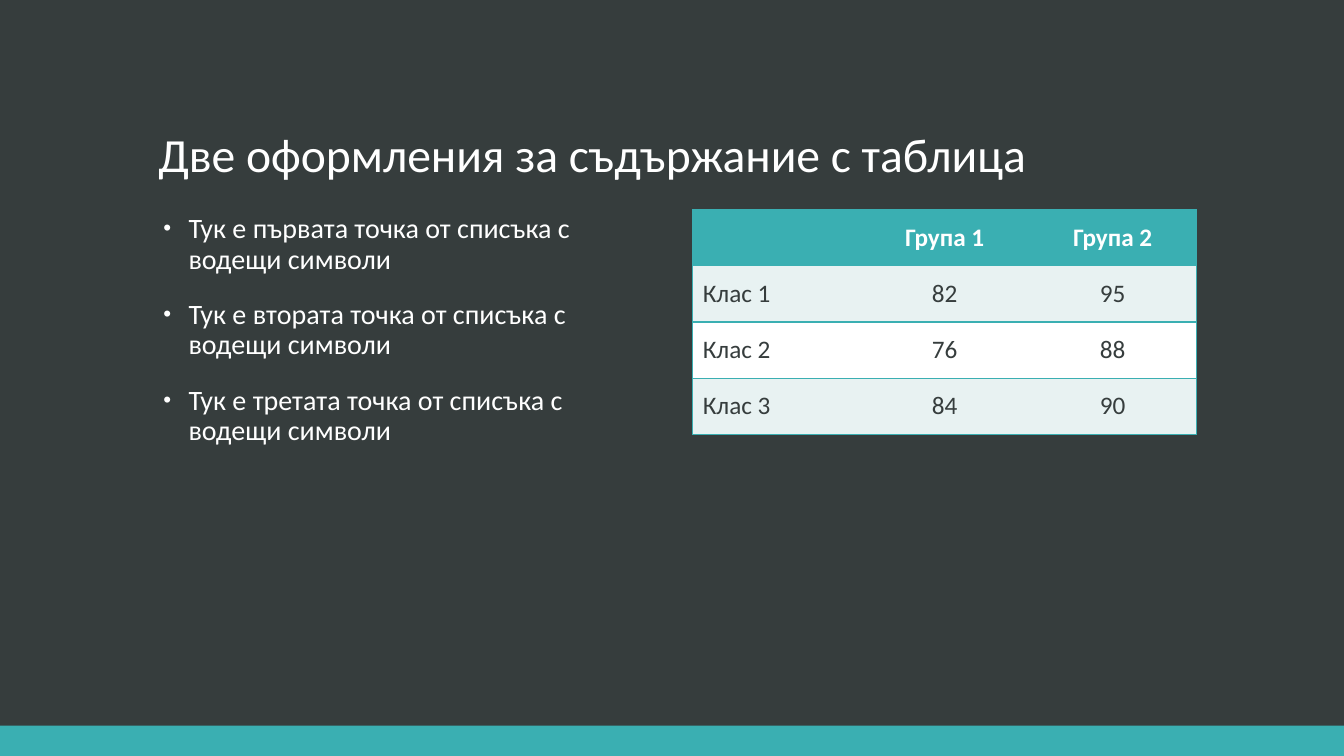
import pptx
import pptx.dml.color
import pptx.enum.shapes
import pptx.enum.text
import pptx.oxml
import pptx.oxml.ns
import pptx.util

Inches = pptx.util.Inches
Align = pptx.enum.text.PP_ALIGN
Anchor = pptx.enum.text.MSO_ANCHOR

FONT = "Calibri"
DARK = "363D3D"
TEAL = "3AAFB2"
PALE = "E8F2F2"
WHITE = "FFFFFF"

TITLE = "Две оформления за съдържание с таблица"
POINTS = [
    f"Тук е {ordinal} точка от списъка с водещи символи"
    for ordinal in ("първата", "втората", "третата")
]
ROWS = [
    ("", "Група 1", "Група 2"),
    ("Клас 1", "82", "95"),
    ("Клас 2", "76", "88"),
    ("Клас 3", "84", "90"),
]


def set_fill(fill, color):
    fill.solid()
    fill.fore_color.rgb = pptx.dml.color.RGBColor.from_string(color)


def format_font(paragraph, size, color, bold=False):
    font = paragraph.font
    font.name = FONT
    font.size = pptx.util.Pt(size)
    font.bold = bold
    set_fill(font.fill, color)


def place(shape, left, top, width, height):
    shape.left, shape.top = Inches(left), Inches(top)
    shape.width, shape.height = Inches(width), Inches(height)


def add_xml(parent, tag, content="", **attributes):
    listed = " ".join(f'{name}="{value}"' for name, value in attributes.items())
    namespace = pptx.oxml.ns.nsdecls("a")
    parent.append(pptx.oxml.parse_xml(f"<a:{tag} {namespace} {listed}>{content}</a:{tag}>"))


def add_bullet(paragraph):
    properties = paragraph._p.get_or_add_pPr()
    properties.set("marL", str(Inches(0.3)))
    properties.set("indent", str(Inches(-0.25)))
    add_xml(properties, "buSzPct", val=80000)
    add_xml(properties, "buFont", typeface="Arial")
    add_xml(properties, "buChar", char="•")


def add_bottom_band(slide):
    band = slide.shapes.add_shape(
        pptx.enum.shapes.MSO_SHAPE.RECTANGLE, 0, Inches(7.2), Inches(13.33), Inches(0.3)
    )
    band.shadow.inherit = False
    band.line.fill.background()
    set_fill(band.fill, TEAL)


def fill_title(title):
    place(title, 1.47, 0.51, 10.4, 1.35)
    frame = title.text_frame
    frame.text = TITLE
    frame.auto_size = pptx.enum.text.MSO_AUTO_SIZE.NONE
    frame.vertical_anchor = Anchor.BOTTOM
    paragraph = frame.paragraphs[0]
    paragraph.alignment = Align.LEFT
    paragraph.line_spacing = 0.9
    format_font(paragraph, 34, WHITE)


def fill_list(body):
    place(body, 1.47, 2.08, 5, 4.51)
    frame = body.text_frame
    frame.text = "\n".join(POINTS)
    frame.auto_size = pptx.enum.text.MSO_AUTO_SIZE.NONE
    for paragraph in frame.paragraphs:
        paragraph.line_spacing = 0.9
        paragraph.space_before = pptx.util.Pt(18)
        add_bullet(paragraph)
        format_font(paragraph, 20, WHITE)


def set_borders(cell, sides):
    line = f'<a:solidFill><a:srgbClr val="{TEAL}"/></a:solidFill>'
    properties = cell._tc.get_or_add_tcPr()
    for side in "LRTB":
        content = line if side in sides else "<a:noFill/>"
        add_xml(properties, f"ln{side}", content, w=pptx.util.Pt(1))


def add_results_table(slide):
    last_column = len(ROWS[0]) - 1
    frame = slide.shapes.add_table(
        len(ROWS), len(ROWS[0]), Inches(6.87), Inches(2.08), Inches(5), Inches(2.23)
    )
    for row, texts in enumerate(ROWS):
        header = row == 0
        background = TEAL if header else (PALE if row % 2 else WHITE)
        for column, text in enumerate(texts):
            cell = frame.table.cell(row, column)
            cell.text = text
            cell.vertical_anchor = Anchor.MIDDLE
            sides = "TB" + ("L" if column == 0 else "") + ("R" if column == last_column else "")
            set_borders(cell, sides)
            set_fill(cell.fill, background)
            paragraph = cell.text_frame.paragraphs[0]
            paragraph.alignment = Align.CENTER if column else Align.LEFT
            format_font(paragraph, 18, WHITE if header else DARK, header)


def main():
    presentation = pptx.Presentation()
    presentation.slide_width = Inches(13.33)
    presentation.slide_height = Inches(7.5)
    slide = presentation.slides.add_slide(presentation.slide_layouts[1])
    set_fill(slide.background.fill, DARK)
    add_bottom_band(slide)
    fill_title(slide.shapes.title)
    fill_list(slide.placeholders[1])
    add_results_table(slide)
    presentation.save("out.pptx")


if __name__ == "__main__":
    main()
